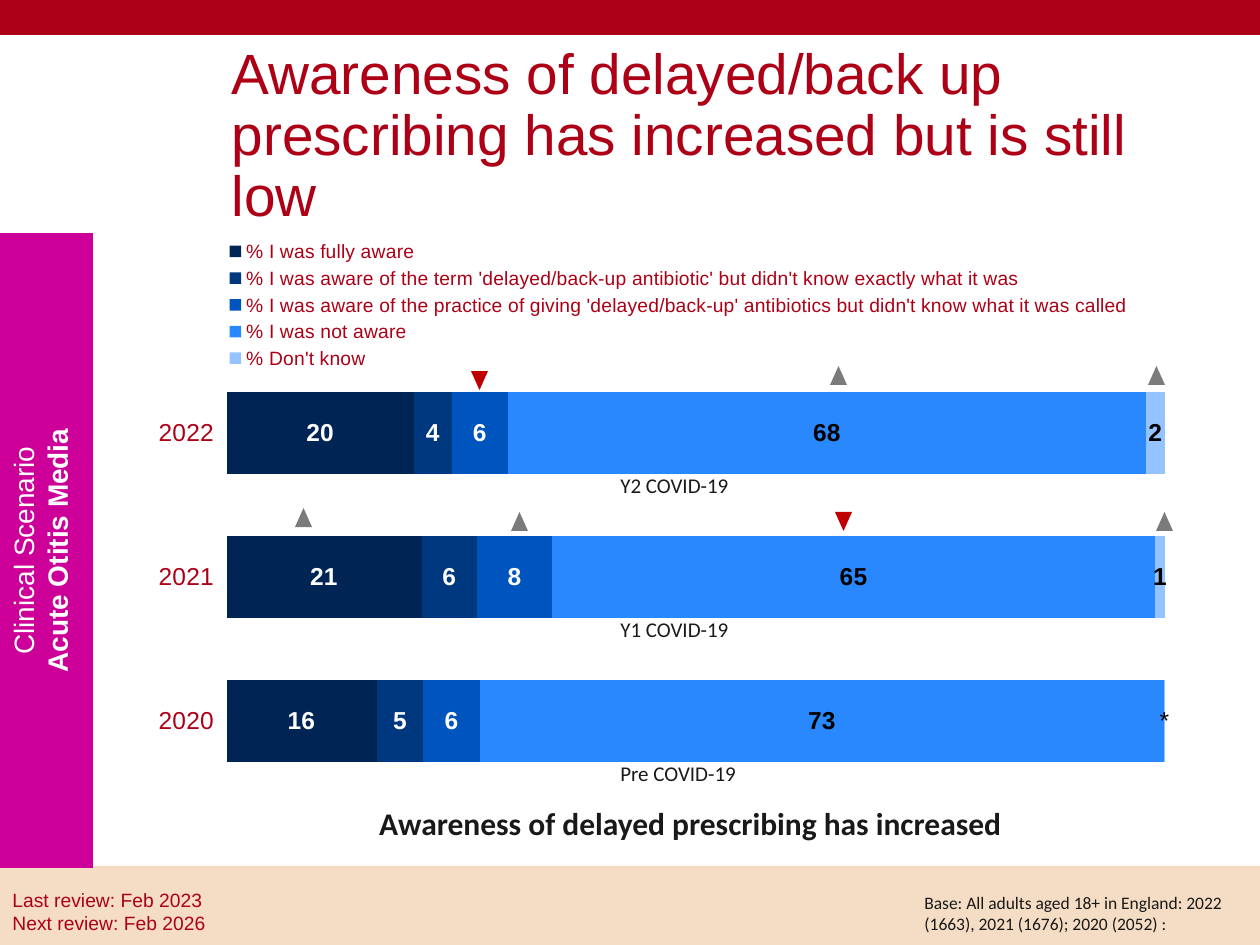
"""Build a slide on awareness of delayed prescribing with a stacked bar chart."""
from lxml.etree import SubElement
from pptx import Presentation
from pptx.chart.data import CategoryChartData
from pptx.dml.color import RGBColor
from pptx.enum.chart import XL_CHART_TYPE, XL_LEGEND_POSITION, XL_TICK_MARK
from pptx.enum.shapes import MSO_SHAPE
from pptx.enum.text import MSO_ANCHOR, MSO_AUTO_SIZE, PP_ALIGN
from pptx.oxml import parse_xml
from pptx.oxml.ns import nsdecls, qn
from pptx.util import Pt

SCALE = 914400 / 126
COLORS = {
    "red": "AD0016", "sand": "F4DDC4", "magenta": "CC0099", "ink": "191919",
    "white": "FFFFFF", "black": "000000", "up": "7B7B7B", "down": "C00000",
}
TITLE = "Awareness of delayed/back up prescribing has increased but is still low"
YEARS = ["2022", "2021", "2020"]
SERIES = [
    ("% I was fully aware", (20, 21, 16), "002554", "white"),
    ("% I was aware of the term 'delayed/back-up antibiotic' but didn't know exactly what it was",
     (4, 6, 5), "00387F", "white"),
    ("% I was aware of the practice of giving 'delayed/back-up' antibiotics but didn't know "
     "what it was called", (6, 8, 6), "0054BE", "white"),
    ("% I was not aware", (68, 65, 73), "2A88FF", "black"),
    ("% Don't know", (2, 1, 0.05), "94C3FF", "black"),
]
CHART_BOX = (112, 224, 1070, 600)
PLOT_LAYOUT = (0.107, 0.229, 0.877, 0.72)
LEGEND_LAYOUT = (0.1, 0.02, 0.86, 0.23)
BANDS = [((0, 866, 1260, 79), "sand"), ((0, -1, 1260, 36), "red")]
MARKERS = [
    (835, 512, "down"), (295, 508, "up"), (511, 512, "up"), (1156, 512, "up"),
    (471, 371, "down"), (830, 366, "up"), (1148, 366, "up"),
]
PERIODS = ["Y2 COVID-19", "Y1 COVID-19", "Pre COVID-19"]
PERIOD_TOP, PERIOD_STEP = 466, 144
CONCLUSION = "Awareness of delayed prescribing has increased"
BASE = "Base: All adults aged 18+ in England: 2022 (1663), 2021 (1676); 2020 (2052) :"
REVIEWS = ["Last review: Feb 2023", "Next review: Feb 2026"]
SCENARIO = ["Clinical Scenario", "Acute Otitis Media"]


def emu(*lengths):
    return [round(length * SCALE) for length in lengths]


def rgb(name):
    return RGBColor.from_string(COLORS.get(name, name))


def style(font, size, color, name="Arial", bold=False):
    font.size, font.name, font.bold = Pt(size), name, bold
    font.color.rgb = rgb(color)


def add_shape(page, kind, box, color):
    shape = page.shapes.add_shape(kind, *emu(*box))
    shape.shadow.inherit = False
    shape.fill.solid()
    shape.fill.fore_color.rgb = rgb(color)
    shape.line.fill.background()
    return shape


def write(shape, lines, size, color, name="Arial", bold=False, align=PP_ALIGN.LEFT):
    frame = shape.text_frame
    frame.word_wrap = True
    frame.vertical_anchor = MSO_ANCHOR.TOP
    frame.text = "\n".join(lines)
    for para in frame.paragraphs:
        para.alignment = align
        style(para.font, size, color, name, bold)


def add_text(page, box, text, size, **options):
    write(page.shapes.add_textbox(*emu(*box)), [text], size, "ink", "Calibri", **options)


def set_layout(parent, index, values, inner=False):
    for old in parent.findall(qn("c:layout")):
        parent.remove(old)
    layout = parse_xml(f"<c:layout {nsdecls('c')}><c:manualLayout/></c:layout>")
    settings = [("layoutTarget", "inner")] if inner else []
    settings += [("xMode", "edge"), ("yMode", "edge"), *zip("xywh", values)]
    for tag, value in settings:
        SubElement(layout[0], qn(f"c:{tag}")).set("val", str(value))
    parent.insert(index, layout)


def add_awareness_chart(page):
    data = CategoryChartData()
    data.categories = YEARS
    for name, values, *_ in SERIES:
        data.add_series(name, values)
    chart = page.shapes.add_chart(
        XL_CHART_TYPE.BAR_STACKED_100, *emu(*CHART_BOX), data).chart
    style(chart.font, 18, "red", "Calibri")
    chart.has_title = False
    chart.has_legend = True
    chart.legend.position = XL_LEGEND_POSITION.TOP
    chart.legend.include_in_layout = False
    style(chart.legend.font, 11, "red")
    years = chart.category_axis
    years.reverse_order = True
    years.major_tick_mark = XL_TICK_MARK.OUTSIDE
    years.format.line.fill.background()
    style(years.tick_labels.font, 14, "red")
    chart.value_axis.visible = False
    chart.value_axis.has_major_gridlines = False
    plot = chart.plots[0]
    plot.gap_width, plot.overlap = 75, 100
    plot.vary_by_categories = False
    for series, (_, _, color, label_color) in zip(plot.series, SERIES):
        series.format.fill.solid()
        series.format.fill.fore_color.rgb = rgb(color)
        series.data_labels.show_value = True
        style(series.data_labels.font, 14, label_color, bold=True)
    star = series.points[2].data_label.text_frame
    star.text = "*"
    style(star.paragraphs[0].runs[0].font, 14, "black")
    root = chart.element
    set_layout(root.find(".//" + qn("c:plotArea")), 0, PLOT_LAYOUT, inner=True)
    set_layout(root.find(".//" + qn("c:legend")), 1, LEGEND_LAYOUT)


def main():
    deck = Presentation()
    deck.slide_width, deck.slide_height = emu(1260, 945)
    page = deck.slides.add_slide(deck.slide_layouts[5])
    for box, color in BANDS:
        add_shape(page, MSO_SHAPE.RECTANGLE, box, color)

    title = page.shapes.title
    title.left, title.top, title.width, title.height = emu(219, 50, 1017, 174)
    write(title, [TITLE], 32.4, "red")
    title.text_frame.auto_size = MSO_AUTO_SIZE.NONE
    title.text_frame.vertical_anchor = MSO_ANCHOR.MIDDLE
    title.text_frame.paragraphs[0].line_spacing = 0.9

    add_awareness_chart(page)
    for left, top, trend in MARKERS:
        marker = add_shape(page, MSO_SHAPE.ISOSCELES_TRIANGLE, (left, top, 17, 19), trend)
        marker.rotation = 180 if trend == "down" else 0
    for row, period in enumerate(PERIODS):
        add_text(page, (608, PERIOD_TOP + row * PERIOD_STEP, 165, 38), period, 12)
    add_text(page, (199, 798, 983, 50), CONCLUSION, 18, bold=True, align=PP_ALIGN.CENTER)

    review = add_shape(page, MSO_SHAPE.RECTANGLE, (0, 882, 421, 59), "sand")
    write(review, REVIEWS, 11, "red")
    add_text(page, (912, 886, 348, 55), BASE, 10)

    side = add_shape(page, MSO_SHAPE.RECTANGLE, (0, 233, 93, 635), "magenta")
    write(side, SCENARIO, 16, "white", align=PP_ALIGN.CENTER)
    side.text_frame.paragraphs[1].font.bold = True
    side.element.find(".//" + qn("a:bodyPr")).set("vert", "vert270")
    deck.save("out.pptx")


if __name__ == "__main__":
    main()
